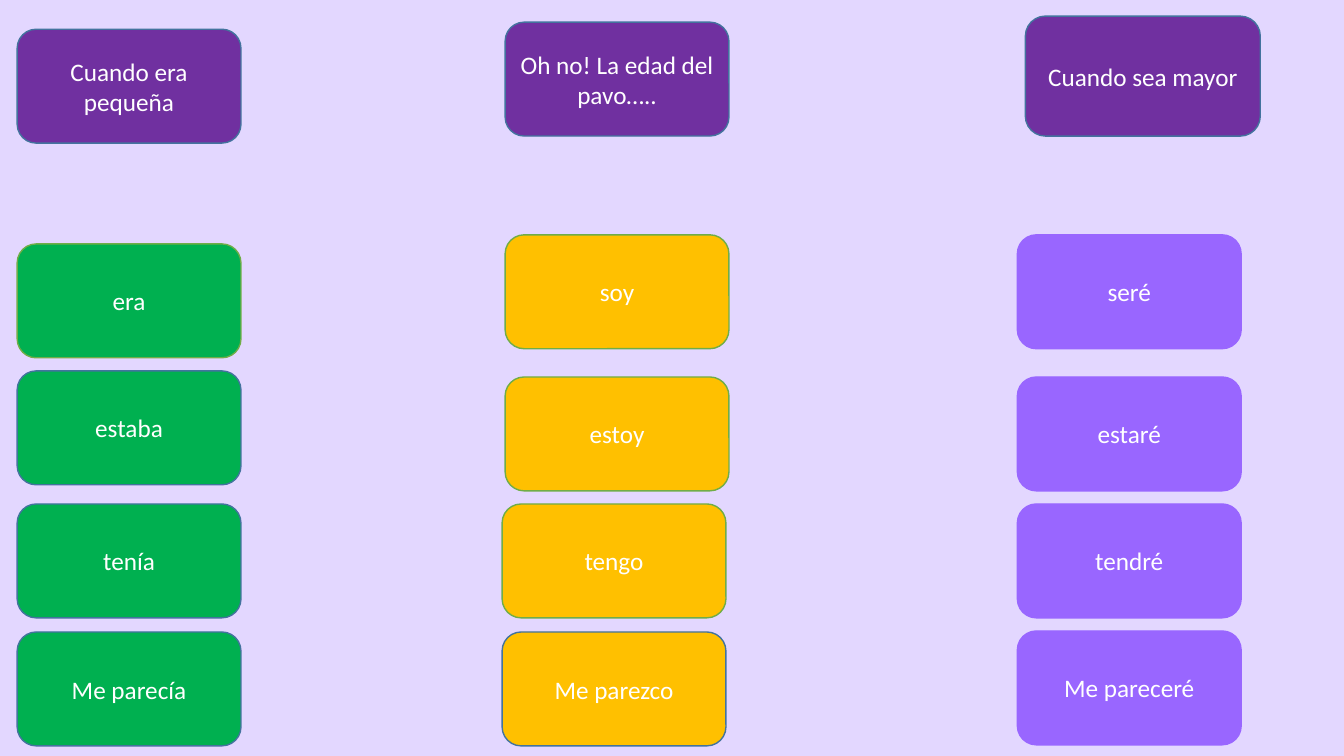
from pptx import Presentation
from pptx.dml.color import RGBColor
from pptx.enum.shapes import MSO_SHAPE as Shape
from pptx.enum.text import MSO_ANCHOR as Anchor, PP_ALIGN as Align
from pptx.util import Inches, Pt

BACK = RGBColor(0xE3, 0xD7, 0xFF)
PURPLE = RGBColor(0x70, 0x30, 0xA0)
GREEN = RGBColor(0x00, 0xB0, 0x50)
GOLD = RGBColor(0xFF, 0xC0, 0x00)
VIOLET = RGBColor(0x99, 0x66, 0xFF)
BLUE = RGBColor(0x43, 0x73, 0x9E)
LIME = RGBColor(0x70, 0xAD, 0x47)
WHITE = RGBColor(0xFF, 0xFF, 0xFF)

WIDE, HIGH = 2.22, 1.13

HEADS = [
    ("Cuando era pequeña", 0.17, 0.29, WIDE, HIGH),
    ("Oh no! La edad del pavo…..", 5.01, 0.22, WIDE, HIGH),
    ("Cuando sea mayor", 10.17, 0.16, 2.33, 1.19),
]
VERBS = [
    (GREEN, [
        ("era", 0.17, 2.42, LIME),
        ("estaba", 0.17, 3.68, BLUE),
        ("tenía", 0.17, 5, BLUE),
        ("Me parecía", 0.17, 6.27, BLUE),
    ]),
    (GOLD, [
        ("soy", 5.01, 2.33, LIME),
        ("estoy", 5.01, 3.74, LIME),
        ("tengo", 4.98, 5, LIME),
        ("Me parezco", 4.98, 6.27, BLUE),
    ]),
    (VIOLET, [
        ("seré", 10.09, 2.33, VIOLET),
        ("estaré", 10.09, 3.74, VIOLET),
        ("tendré", 10.09, 5, VIOLET),
        ("Me pareceré", 10.09, 6.26, VIOLET),
    ]),
]


def add_card(slide, text, left, top, wide, high, fill, edge):
    card = slide.shapes.add_shape(
        Shape.ROUNDED_RECTANGLE,
        Inches(left), Inches(top), Inches(wide), Inches(high))
    card.shadow.inherit = False
    card.fill.solid()
    card.fill.fore_color.rgb = fill
    card.line.color.rgb = edge
    card.line.width = Pt(1)
    frame = card.text_frame
    frame.word_wrap = True
    frame.vertical_anchor = Anchor.MIDDLE
    frame.text = text
    para = frame.paragraphs[0]
    para.alignment = Align.CENTER
    para.font.name = "Calibri"
    para.font.size = Pt(18)
    para.font.color.rgb = WHITE


def main():
    deck = Presentation()
    deck.slide_width = Inches(13.33)
    deck.slide_height = Inches(7.5)
    slide = deck.slides.add_slide(deck.slide_layouts[6])
    slide.background.fill.solid()
    slide.background.fill.fore_color.rgb = BACK
    for head in HEADS:
        add_card(slide, *head, PURPLE, BLUE)
    for fill, cards in VERBS:
        for text, left, top, edge in cards:
            add_card(slide, text, left, top, WIDE, HIGH, fill, edge)
    deck.save("out.pptx")


if __name__ == "__main__":
    main()
